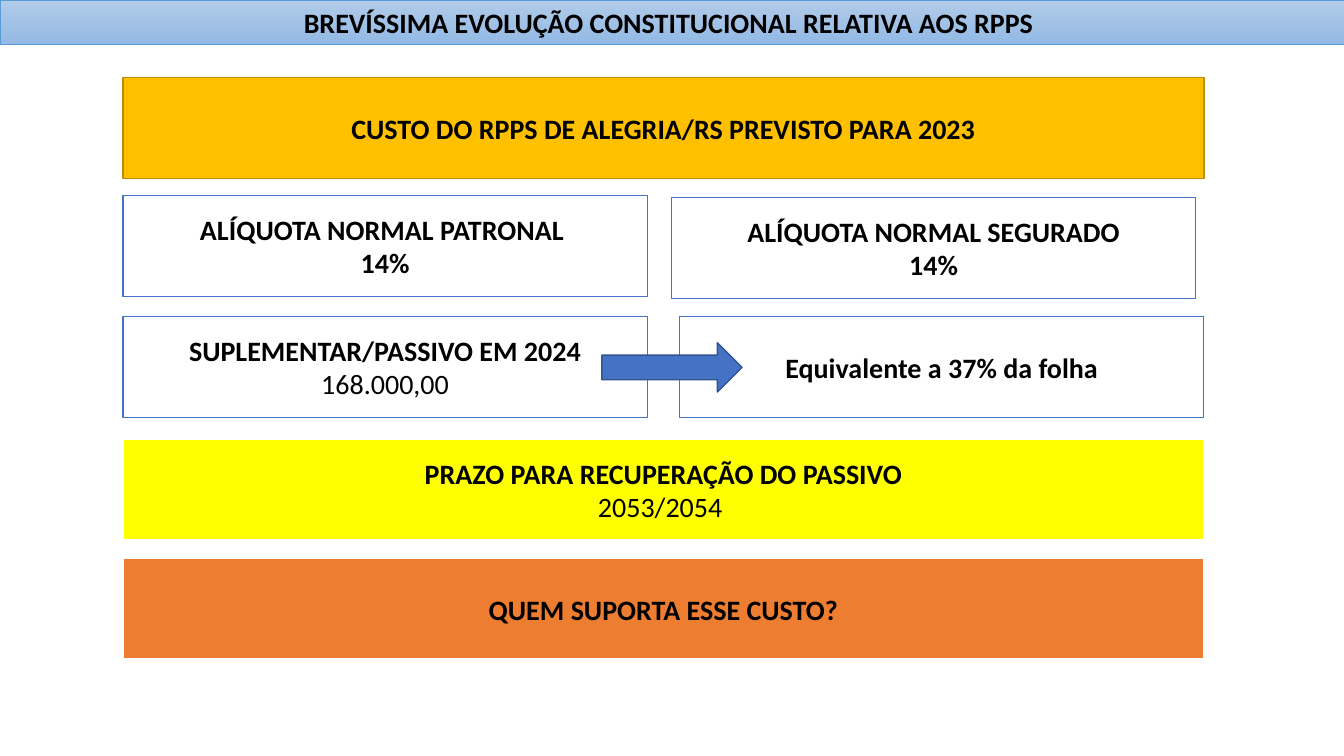
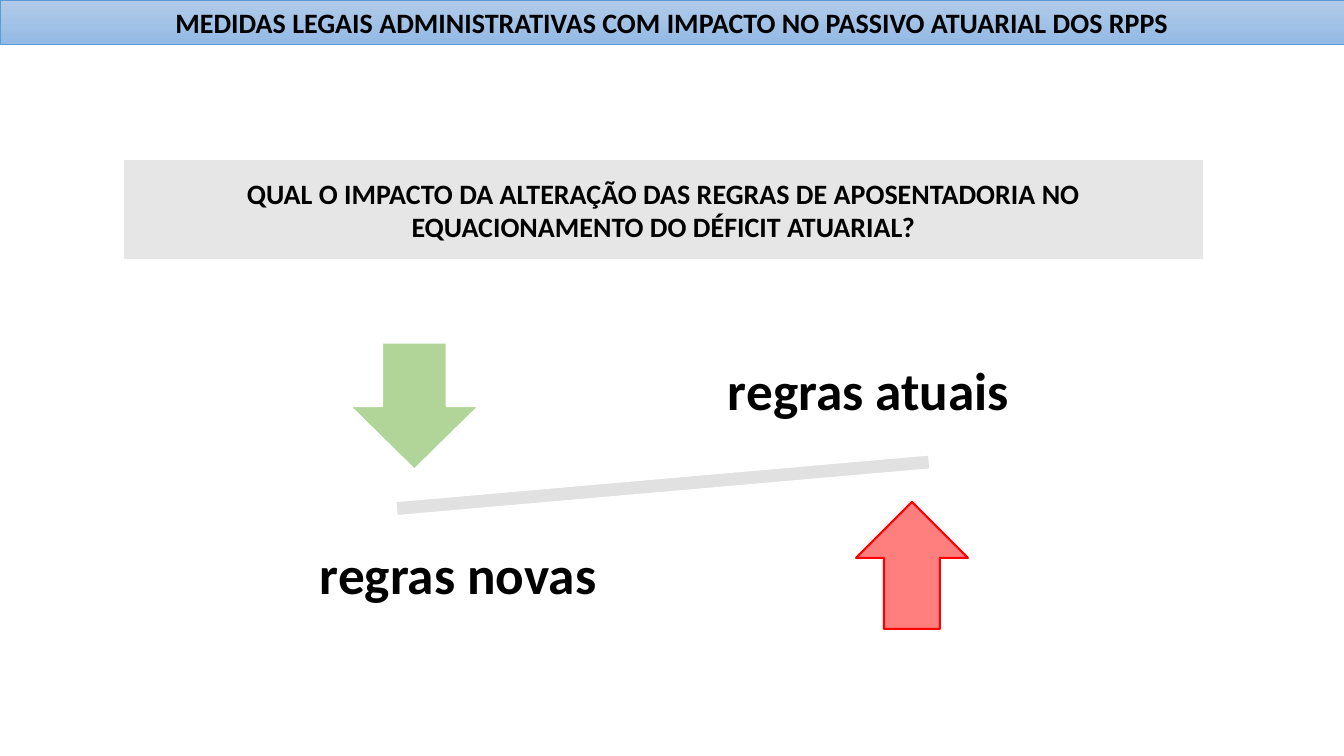
"""Build two slides on pension scheme costs and the effect of new retirement rules."""
import pptx
import pptx.dml.color
import pptx.enum.shapes
import pptx.enum.text
import pptx.oxml
import pptx.oxml.ns
import pptx.util

Inches = pptx.util.Inches
Pt = pptx.util.Pt
SHAPES = pptx.enum.shapes.MSO_SHAPE
CENTER = pptx.enum.text.PP_ALIGN.CENTER
MIDDLE = pptx.enum.text.MSO_ANCHOR.MIDDLE

FONT = "Calibri"
BLACK, WHITE, BLUE, RED = "000000", "FFFFFF", "4472C4", "FF0000"
LEFT, FULL_WIDTH, HALF_WIDTH, BOX_HEIGHT = 1.22, 10.72, 5.2, 1
RIGHT_COLUMN = LEFT + FULL_WIDTH - HALF_WIDTH


def rgb(value):
    return pptx.dml.color.RGBColor.from_string(value)


def format_text(text_frame, text, size, plain_lines=()):
    text_frame.text = text
    text_frame.word_wrap = True
    for index, paragraph in enumerate(text_frame.paragraphs):
        paragraph.alignment = CENTER
        for run in paragraph.runs:
            run.font.name = FONT
            run.font.size = Pt(size)
            run.font.bold = index not in plain_lines
            run.font.color.rgb = rgb(BLACK)


presentation = pptx.Presentation()
presentation.slide_width = Inches(13.33)
presentation.slide_height = Inches(7.5)
title_only = presentation.slide_layouts[5]

titles = [
    "BREVÍSSIMA EVOLUÇÃO CONSTITUCIONAL RELATIVA AOS RPPS ",
    "MEDIDAS LEGAIS ADMINISTRATIVAS COM IMPACTO NO PASSIVO ATUARIAL DOS RPPS",
]
for text in titles:
    title = presentation.slides.add_slide(title_only).shapes.title
    title.left, title.top = Inches(0), Inches(0)
    title.width, title.height = presentation.slide_width, Inches(0.44)
    title.fill.gradient()
    title.fill.gradient_angle = 270
    for stop, color in zip(title.fill.gradient_stops, ("B1CBE9", "93B9E4")):
        stop.color.rgb = rgb(color)
    for stop, position in zip(title.fill.gradient_stops, (0, 1)):
        stop.position = position
    title.line.color.rgb = rgb("5B9BD5")
    title.line.width = Pt(0.5)
    format_text(title.text_frame, text, 20)
    title.text_frame.vertical_anchor = pptx.enum.text.MSO_ANCHOR.TOP
    title.text_frame.auto_size = pptx.enum.text.MSO_AUTO_SIZE.NONE

cost_slide, impact_slide = presentation.slides

boxes = [
    (cost_slide, LEFT, 0.77, FULL_WIDTH, "FFC000", "BD8E00",
     "CUSTO DO RPPS DE ALEGRIA/RS PREVISTO PARA 2023", ()),
    (cost_slide, LEFT, 1.94, HALF_WIDTH, WHITE, BLUE,
     "ALÍQUOTA NORMAL PATRONAL \n14%", ()),
    (cost_slide, 6.66, 1.96, HALF_WIDTH, WHITE, BLUE,
     "ALÍQUOTA NORMAL SEGURADO\n14%", ()),
    (cost_slide, LEFT, 3.14, HALF_WIDTH, WHITE, BLUE,
     "SUPLEMENTAR/PASSIVO EM 2024\n168.000,00", (1,)),
    (cost_slide, RIGHT_COLUMN, 3.14, HALF_WIDTH, WHITE, BLUE,
     "Equivalente a 37% da folha", ()),
    (cost_slide, LEFT, 4.36, FULL_WIDTH, "FFFF00", WHITE,
     "PRAZO PARA RECUPERAÇÃO DO PASSIVO\n2053/2054 ", (1,)),
    (cost_slide, LEFT, 5.54, FULL_WIDTH, "ED7D31", WHITE,
     "QUEM SUPORTA ESSE CUSTO?", ()),
    (impact_slide, LEFT, 1.58, FULL_WIDTH, "E7E6E6", WHITE,
     "QUAL O IMPACTO DA ALTERAÇÃO DAS REGRAS DE APOSENTADORIA NO\n"
     "EQUACIONAMENTO DO DÉFICIT ATUARIAL?", ()),
]
for slide, left, top, width, fill, line, text, plain_lines in boxes:
    box = slide.shapes.add_shape(
        SHAPES.RECTANGLE, Inches(left), Inches(top), Inches(width), Inches(BOX_HEIGHT))
    box.shadow.inherit = False
    box.fill.solid()
    box.fill.fore_color.rgb = rgb(fill)
    box.line.color.rgb = rgb(line)
    box.line.width = Pt(1)
    format_text(box.text_frame, text, 20, plain_lines)
    box.text_frame.vertical_anchor = MIDDLE

symbols = [
    (cost_slide, SHAPES.RIGHT_ARROW, (5.97, 3.4, 1.39, 0.49), 0, BLUE, 100, "325491", 1),
    (impact_slide, SHAPES.MATH_MINUS, (2.96, 4.5, 7.23, 0.63), 355, "E1E1E1", 100, WHITE, 1.5),
    (impact_slide, SHAPES.DOWN_ARROW, (3.47, 3.4, 1.28, 1.26), 0, "A9D18E", 90, WHITE, 1.5),
    (impact_slide, SHAPES.UP_ARROW, (8.49, 4.98, 1.11, 1.26), 0, RED, 50, RED, 1.5),
]
for slide, preset, bounds, rotation, fill, opacity, line, line_width in symbols:
    symbol = slide.shapes.add_shape(preset, *map(Inches, bounds))
    symbol.shadow.inherit = False
    symbol.rotation = rotation
    symbol.fill.solid()
    symbol.fill.fore_color.rgb = rgb(fill)
    symbol.line.color.rgb = rgb(line)
    symbol.line.width = Pt(line_width)
    if opacity < 100:
        color = symbol.element.spPr.find(pptx.oxml.ns.qn("a:solidFill"))[0]
        alpha = pptx.oxml.parse_xml(
            f'<a:alpha {pptx.oxml.ns.nsdecls("a")} val="{opacity * 1000}"/>')
        color.append(alpha)

for text, left, top in [("regras atuais", 6.9, 3.24), ("regras novas", 2.83, 5.07)]:
    label = impact_slide.shapes.add_textbox(
        Inches(left), Inches(top), Inches(3.43), Inches(1.32))
    text_frame = label.text_frame
    format_text(text_frame, text, 38)
    text_frame.vertical_anchor = MIDDLE
    text_frame.margin_left = text_frame.margin_right = Inches(0.3)
    text_frame.margin_top = text_frame.margin_bottom = Inches(0.3)
    text_frame.paragraphs[0].line_spacing = 0.9
    text_frame.paragraphs[0].space_after = Pt(13)

presentation.save("out.pptx")
